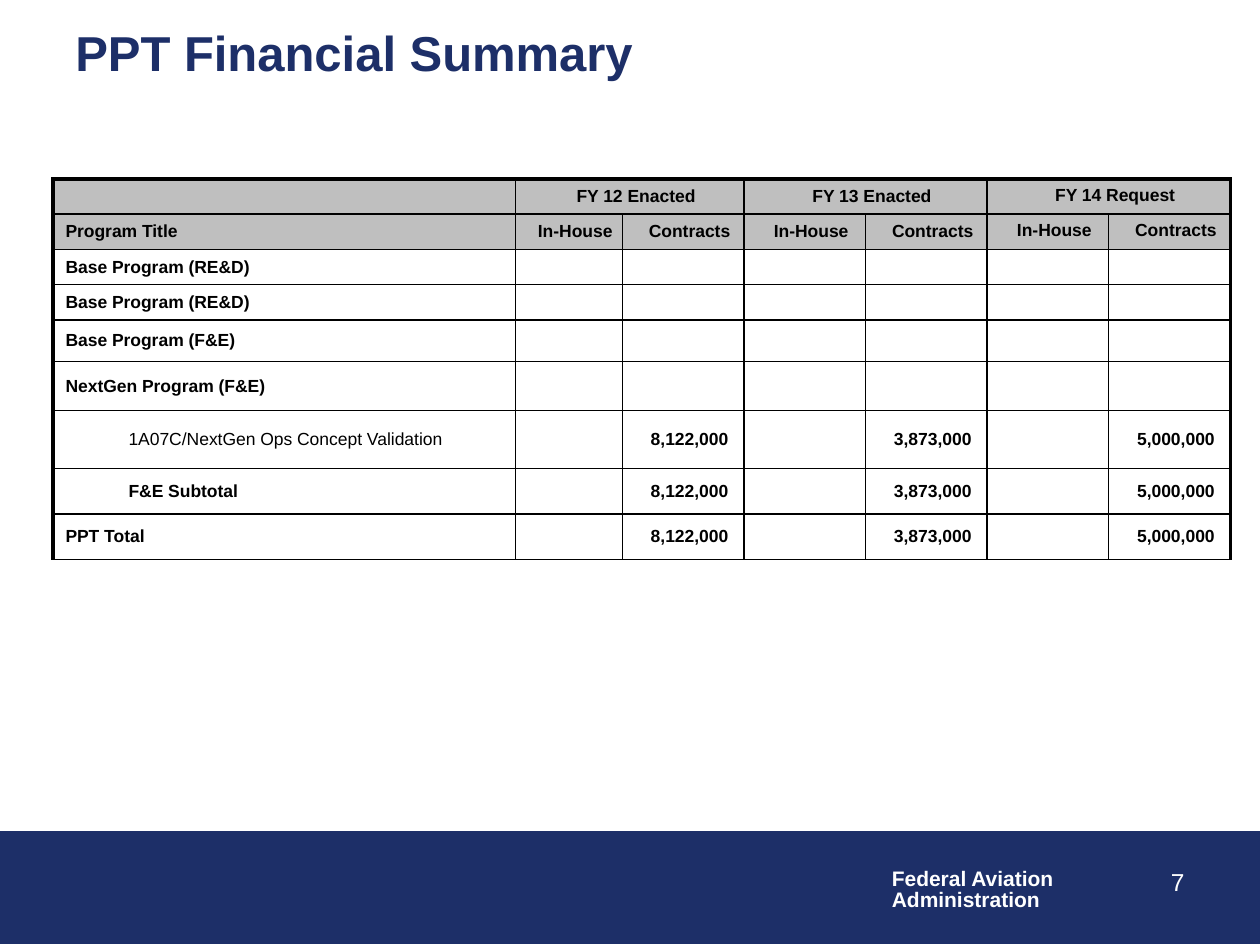
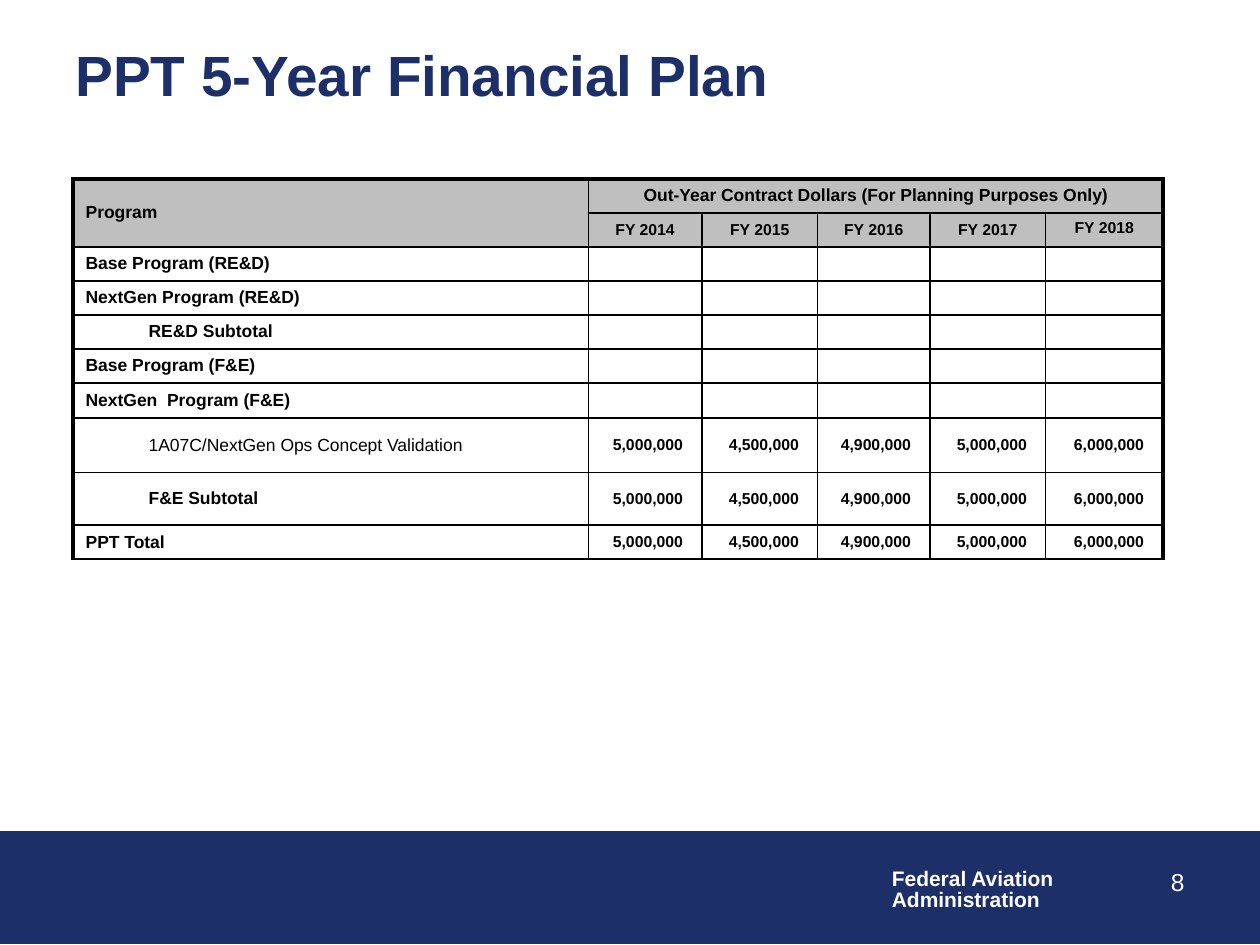
from lxml import etree
from pptx import Presentation
from pptx.dml.color import RGBColor
from pptx.enum.shapes import MSO_SHAPE
from pptx.enum.text import MSO_ANCHOR, PP_ALIGN
from pptx.oxml.ns import qn
from pptx.util import Inches, Pt

NAVY = RGBColor(0x1D, 0x2F, 0x68)
GREY = RGBColor(0xBF, 0xBF, 0xBF)
WHITE = RGBColor(0xFF, 0xFF, 0xFF)
BLACK = RGBColor(0, 0, 0)
RECT = MSO_SHAPE.RECTANGLE
TOP, MID = MSO_ANCHOR.TOP, MSO_ANCHOR.MIDDLE
LEFT, CENTER, RIGHT = PP_ALIGN.LEFT, PP_ALIGN.CENTER, PP_ALIGN.RIGHT
FONT = "Arial"
COLS = 100
HEADS = 2
THIN, THICK = Pt(1), Pt(2.25)
PLAIN = "1A07C/NextGen Ops Concept Validation"
INSET = {PLAIN, "RE&D Subtotal", "F&E Subtotal"}


class Deck:
    def __init__(self):
        self.prs = Presentation()
        self.prs.slide_width = Inches(10)
        self.prs.slide_height = Inches(7.5)
        self.unit = self.prs.slide_width / COLS

    def span(self, *cols):
        return [round(c * self.unit) for c in cols]

    def page(self, title, top, size, num):
        self.slide = self.prs.slides.add_slide(self.prs.slide_layouts[6])
        self.band()
        self.text(["Federal Aviation", "Administration"], (69.8, 68.5, 15, 4.4),
                  12, WHITE, True, lead=0.85, wrap=False)
        self.text([title], (5, top, 92.7, 6.7), size, NAVY, True, anchor=MID)
        self.text([str(num)], (71.7, 68.3, 23.3, 5.2), 14, WHITE, align=RIGHT)

    def band(self):
        band = self.slide.shapes.add_shape(RECT, *self.span(0, 66, 100, 8.9))
        band.shadow.inherit = False
        band.fill.solid()
        band.fill.fore_color.rgb = NAVY
        band.line.color.rgb = NAVY
        band.line.width = Pt(0.75)

    def style(self, para, size, ink, bold, align):
        para.alignment = align
        for run in para.runs:
            font = run.font
            font.name, font.size, font.bold = FONT, Pt(size), bold
            font.color.rgb = ink

    def text(self, lines, box, size, ink, bold=False, align=LEFT,
             anchor=TOP, lead=None, wrap=True):
        frame = self.slide.shapes.add_textbox(*self.span(*box)).text_frame
        frame.word_wrap = wrap
        frame.vertical_anchor = anchor
        frame.text = "\n".join(lines)
        for para in frame.paragraphs:
            para.line_spacing = lead
            self.style(para, size, ink, bold, align)

    def edge(self, cell, side, width):
        line = etree.SubElement(cell._tc.get_or_add_tcPr(), qn("a:ln" + side), w=str(width))
        fill = etree.SubElement(line, qn("a:solidFill"))
        etree.SubElement(fill, qn("a:srgbClr"), val=str(BLACK))

    def cell(self, cell, text, size, align, pad, anchor, fill, wide):
        for side in "LRTB":
            self.edge(cell, side, THICK if side in wide else THIN)
        cell.fill.solid()
        cell.fill.fore_color.rgb = fill
        cell.vertical_anchor = anchor
        cell.margin_right = self.span(pad)[0]
        cell.text = text
        para = cell.text_frame.paragraphs[0]
        self.style(para, size, BLACK, text != PLAIN, align)
        if text in INSET:
            para.level = 1
            props = para._p.get_or_add_pPr()
            props.set("marL", str(self.span(5)[0]))
            props.set("indent", "0")
        if not text:
            etree.SubElement(para._p, qn("a:endParaRPr"), sz=str(size * 100))

    def table(self, left, widths, heights, rows, spans, small, head_pad, pad, align):
        box = self.span(left, 14.2, sum(widths), sum(heights))
        frame = self.slide.shapes.add_table(len(heights), len(widths), *box)
        grid = frame.table
        for col, width in zip(grid.columns, self.span(*widths)):
            col.width = width
        for row, height in zip(grid.rows, self.span(*heights)):
            row.height = height
        last = len(widths) - 1
        for r, row in enumerate(rows):
            head = r < HEADS
            for c in range(last + 1):
                text = row[c] if c < len(row) else ""
                wide = "T" * (r == 0) + "L" * (c == 0) + "R" * (c == last)
                self.cell(grid.cell(r, c), text,
                          small if c and r else 10,
                          LEFT if c == 0 else CENTER if head else align,
                          head_pad if head or c == 0 else pad,
                          TOP if head and c >= 5 else MID,
                          GREY if head else WHITE, wide)
        for r, c, down, across in spans:
            start, end = grid.cell(r, c), grid.cell(r + down - 1, c + across - 1)
            if c + across - 1 == last:
                start._tc.tcPr.find(qn("a:lnR")).set("w", str(THICK))
            start.merge(end)


def main():
    deck = Deck()

    deck.page("PPT Financial Summary", 0.8, 28, 7)
    years = ["", "FY 12 Enacted", "", "FY 13 Enacted", "", "FY 14 Request"]
    funds = ["", "8,122,000", "", "3,873,000", "", "5,000,000"]
    deck.table(
        4.2, [36.7, 8.5] + [9.65] * 5,
        [2.8] * 4 + [3.3, 3.9, 4.6, 3.6, 3.6],
        [years,
         ["Program Title"] + ["In-House", "Contracts"] * 3,
         ["Base Program (RE&D)"],
         ["Base Program (RE&D)"],
         ["Base Program (F&E)"],
         ["NextGen Program (F&E)"],
         [PLAIN] + funds,
         ["F&E Subtotal"] + funds,
         ["PPT Total"] + funds],
        [(0, c, 1, 2) for c in (1, 3, 5)],
        small=10, head_pad=0, pad=0, align=CENTER)

    deck.page("PPT 5-Year Financial Plan", 2.5, 32.4, 8)
    plan = ["5,000,000", "4,500,000", "4,900,000", "5,000,000", "6,000,000"]
    deck.table(
        5.8, [40.9, 9, 9.2, 8.9, 9.2, 9.3],
        [2.7] * 6 + [2.8, 4.3, 4.2, 2.7],
        [["Program", "Out-Year Contract Dollars (For Planning Purposes Only)"],
         [""] + [f"FY {year}" for year in range(2014, 2019)],
         ["Base Program (RE&D)"],
         ["NextGen Program (RE&D)"],
         ["RE&D Subtotal"],
         ["Base Program (F&E)"],
         ["NextGen  Program (F&E)"],
         [PLAIN] + plan,
         ["F&E Subtotal"] + plan,
         ["PPT Total"] + plan],
        [(0, 0, 2, 1), (0, 1, 1, 5)],
        small=9, head_pad=1, pad=1.5, align=RIGHT)

    deck.prs.save("out.pptx")


if __name__ == "__main__":
    main()
